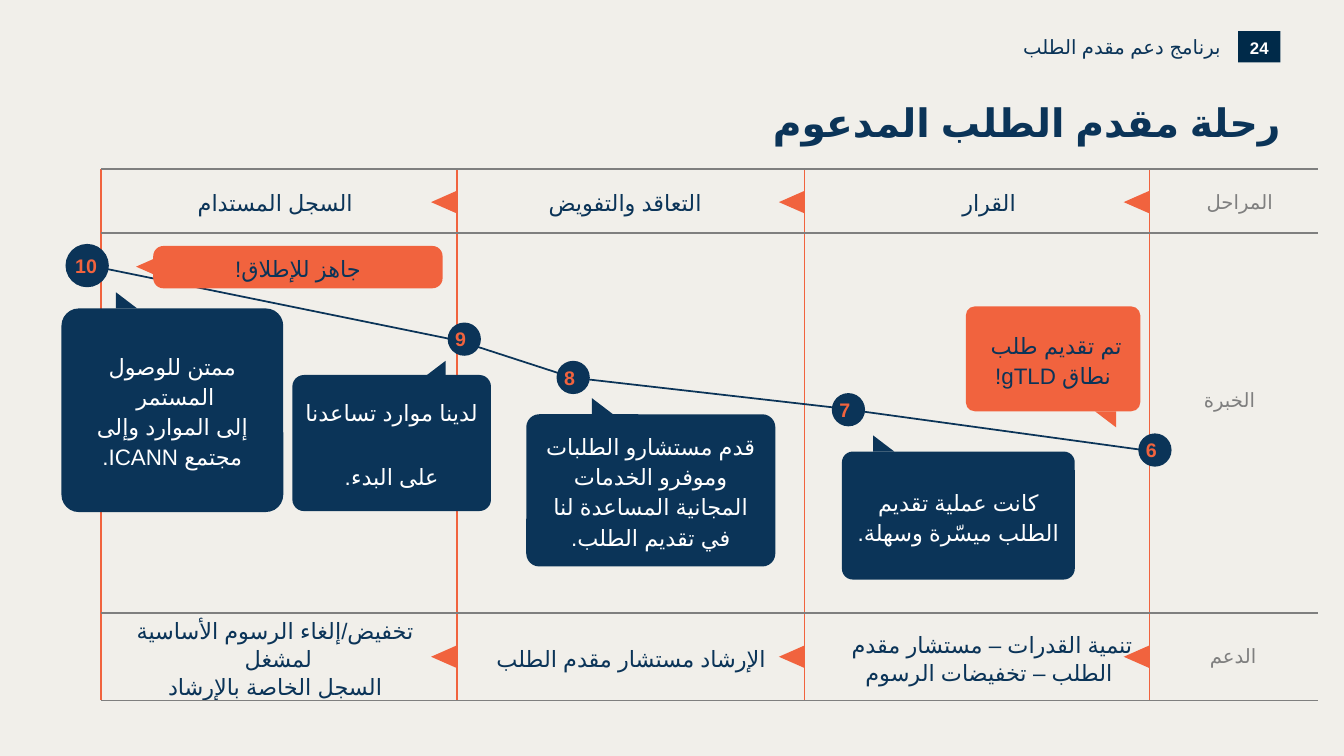
from dataclasses import dataclass
from typing import Optional

from lxml import etree
from pptx import Presentation
from pptx.dml.color import RGBColor
from pptx.enum import lang, shapes, text
from pptx.oxml import ns
from pptx.util import Inches, Pt

COLORS = {
    "paper": "F1EFEA", "navy": "0B3458", "badge": "002A49",
    "orange": "F1633E", "grey": "7F7F7F", "white": "FFFFFF",
}
FONT = "Arial"
Box = tuple[float, float, float, float]
Point = tuple[float, float]
NO_INSET: Box = (0, 0, 0, 0)
TEXT_INSET: Box = (0.1, 0.05, 0.1, 0.05)
CALLOUT_INSET: Box = (0.08, 0.04, 0.08, 0.04)
KIND = shapes.MSO_SHAPE
MIDDLE, TOP = text.MSO_ANCHOR.MIDDLE, text.MSO_ANCHOR.TOP
CENTER, RIGHT = text.PP_ALIGN.CENTER, text.PP_ALIGN.RIGHT


@dataclass
class Style:
    size: float = 16
    color: str = "navy"
    bold: bool = False
    align: text.PP_ALIGN = CENTER
    anchor: text.MSO_ANCHOR = MIDDLE
    spacing: float = 1.0
    inset: Box = NO_INSET
    rtl: bool = True


@dataclass
class Stage:
    right: float
    name: str
    name_left: float
    support: str
    support_left: float
    support_width: float
    support_inset: Box = TEXT_INSET


@dataclass
class Step:
    number: str
    left: float
    top: float
    size: float = 0.33
    inset: Box = TEXT_INSET


@dataclass
class Callout:
    words: str
    box: Box
    tail: Box
    fill: str = "navy"
    color: str = "white"
    radius: float = 0.085
    tail_kind: shapes.MSO_SHAPE = KIND.RIGHT_TRIANGLE
    tail_turn: float = 0
    tail_flip: bool = False


STAGES = [
    Stage(11.4, "القرار", 8.2, "تنمية القدرات – مستشار مقدم \vالطلب – تخفيضات الرسوم",
          8.02, 3.46, (0.12, 0, 0, 0)),
    Stage(7.98, "التعاقد والتفويض", 4.59, "الإرشاد مستشار مقدم الطلب", 4.54, 3.44),
    Stage(4.53, "السجل المستدام", 1.12,
          "تخفيض/إلغاء الرسوم الأساسية لمشغل \vالسجل الخاصة بالإرشاد", 1.01, 3.44),
]
STEPS = [
    Step("6", 11.29, 4.3), Step("7", 8.25, 3.9), Step("8", 5.52, 3.58),
    Step("9", 4.44, 3.2), Step("10", 0.65, 2.42, 0.43, (0, 0, 0.02, 0)),
]
JOURNEY: list[tuple[Point, Point]] = [
    ((11.45, 4.48), (8.32, 4.05)), ((8.51, 4.07), (5.62, 3.74)),
    ((5.75, 3.77), (4.55, 3.38)), ((4.55, 3.38), (0.97, 2.65)),
]
CALLOUTS = [
    Callout("تم تقديم طلب \vنطاق gTLD!", (9.58, 3.04, 1.73, 1.04),
            (10.86, 4.08, 0.21, 0.16), "orange", "navy", tail_turn=180),
    Callout("كانت عملية تقديم الطلب ميسّرة وسهلة.", (8.35, 4.48, 2.31, 1.27),
            (8.66, 4.32, 0.21, 0.16)),
    Callout("قدم مستشارو الطلبات وموفرو الخدمات المجانية المساعدة لنا في تقديم الطلب.",
            (5.22, 4.11, 2.47, 1.51), (5.87, 3.95, 0.21, 0.16)),
    Callout("لدينا موارد تساعدنا \vعلى البدء.", (2.9, 3.72, 1.97, 1.35),
            (4.21, 3.58, 0.21, 0.16), tail_flip=True),
    Callout("ممتن للوصول المستمر \vإلى الموارد وإلى مجتمع ICANN.",
            (0.61, 3.06, 2.2, 2.02), (1.15, 2.9, 0.21, 0.16)),
    Callout("جاهز للإطلاق!", (1.52, 2.44, 2.87, 0.42), (1.36, 2.56, 0.15, 0.17),
            "orange", "navy", 0.239, KIND.ISOSCELES_TRIANGLE, 270),
]
ROW_LABELS: list[tuple[str, Box]] = [
    ("المراحل", (11.57, 1.88, 1.45, 0.24)),
    ("الخبرة", (11.31, 3.85, 1.77, 0.24)),
    ("الدعم", (11.41, 6.39, 1.64, 0.24)),
]


def rgb(name: str) -> RGBColor:
    return RGBColor.from_string(COLORS[name])


def write(shape, words: str, style: Style) -> None:
    frame = shape.text_frame
    frame.word_wrap = True
    frame.auto_size = text.MSO_AUTO_SIZE.NONE
    frame.vertical_anchor = style.anchor
    (frame.margin_left, frame.margin_top,
     frame.margin_right, frame.margin_bottom) = map(Inches, style.inset)
    para = frame.paragraphs[0]
    para.text = words
    para.alignment = style.align
    para.line_spacing = style.spacing
    if style.rtl:
        para._p.get_or_add_pPr().set("rtl", "1")
    for span in para.runs:
        span.font.name = FONT
        span.font.size = Pt(style.size)
        span.font.bold = style.bold
        span.font.color.rgb = rgb(style.color)
        if style.rtl:
            span.font.language_id = lang.MSO_LANGUAGE_ID.ARABIC
        complex_script = etree.SubElement(span.font._element, ns.qn("a:cs"))
        complex_script.set("typeface", FONT)


def add_label(page, words: str, box: Box, style: Style) -> None:
    write(page.shapes.add_textbox(*map(Inches, box)), words, style)


def add_filled(page, kind: shapes.MSO_SHAPE, box: Box, fill: str, turn: float = 0,
               words: str = "", style: Optional[Style] = None):
    shape = page.shapes.add_shape(kind, *map(Inches, box))
    shape.shadow.inherit = False
    shape.fill.solid()
    shape.fill.fore_color.rgb = rgb(fill)
    shape.line.fill.background()
    shape.rotation = turn
    if style:
        write(shape, words, style)
    return shape


def add_line(page, start: Point, end: Point, color: str) -> None:
    line = page.shapes.add_connector(shapes.MSO_CONNECTOR.STRAIGHT,
                                     *map(Inches, (*start, *end)))
    line.line.color.rgb = rgb(color)
    line.line.width = Pt(1.25)
    etree.SubElement(line._element.spPr, ns.qn("a:effectLst"))


def add_callout(page, callout: Callout) -> None:
    style = Style(color=callout.color, spacing=1.12, inset=CALLOUT_INSET)
    bubble = add_filled(page, KIND.ROUNDED_RECTANGLE, callout.box, callout.fill,
                        words=callout.words, style=style)
    bubble.adjustments[0] = callout.radius
    tail = add_filled(page, callout.tail_kind, callout.tail, callout.fill, callout.tail_turn)
    if callout.tail_flip:
        tail._element.spPr.xfrm.set("flipH", "1")


def add_header(page) -> None:
    add_filled(page, KIND.RECTANGLE, (12.28, 0.31, 0.42, 0.31), "badge", words="24",
               style=Style(12, "white", True, spacing=1.08, rtl=False))
    title = page.shapes.title
    title.left, title.top, title.width, title.height = map(Inches, (0.63, 0.98, 12.07, 0.58))
    write(title, "رحلة مقدم الطلب المدعوم", Style(28, bold=True, align=RIGHT, anchor=TOP))
    add_label(page, "برنامج دعم مقدم الطلب", (7.28, 0.35, 4.83, 0.24),
              Style(14, align=RIGHT, anchor=TOP))


def add_stage(page, stage: Stage) -> None:
    add_label(page, stage.name, (stage.name_left, 1.77, 3.22, 0.46), Style(spacing=1.06))
    add_label(page, stage.support, (stage.support_left, 6.14, stage.support_width, 0.77),
              Style(spacing=1.06, inset=stage.support_inset))
    for top in (1.88, 6.39):
        add_filled(page, KIND.ISOSCELES_TRIANGLE, (stage.right - 0.24, top, 0.22, 0.25),
                   "orange", 270)


def main() -> None:
    deck = Presentation()
    deck.slide_width, deck.slide_height = Inches(13.33), Inches(7.5)
    page = deck.slides.add_slide(deck.slide_layouts[5])
    page.background.fill.solid()
    page.background.fill.fore_color.rgb = rgb("paper")
    add_header(page)
    for x in (1, *(stage.right for stage in STAGES)):
        add_line(page, (x, 1.68), (x, 6.94), "orange")
    for start, end in JOURNEY:
        add_line(page, start, end, "navy")
    for stage in STAGES:
        add_stage(page, stage)
    for step in STEPS:
        add_filled(page, KIND.OVAL, (step.left, step.top, step.size, step.size), "navy",
                   words=step.number, style=Style(14, "orange", True, inset=step.inset))
    for callout in CALLOUTS:
        add_callout(page, callout)
    for y in (1.68, 2.31, 6.08, 6.95):
        add_line(page, (13.07, y), (1, y), "grey")
    for words, box in ROW_LABELS:
        add_label(page, words, box, Style(14, "grey", anchor=TOP))
    deck.save("out.pptx")


if __name__ == "__main__":
    main()
